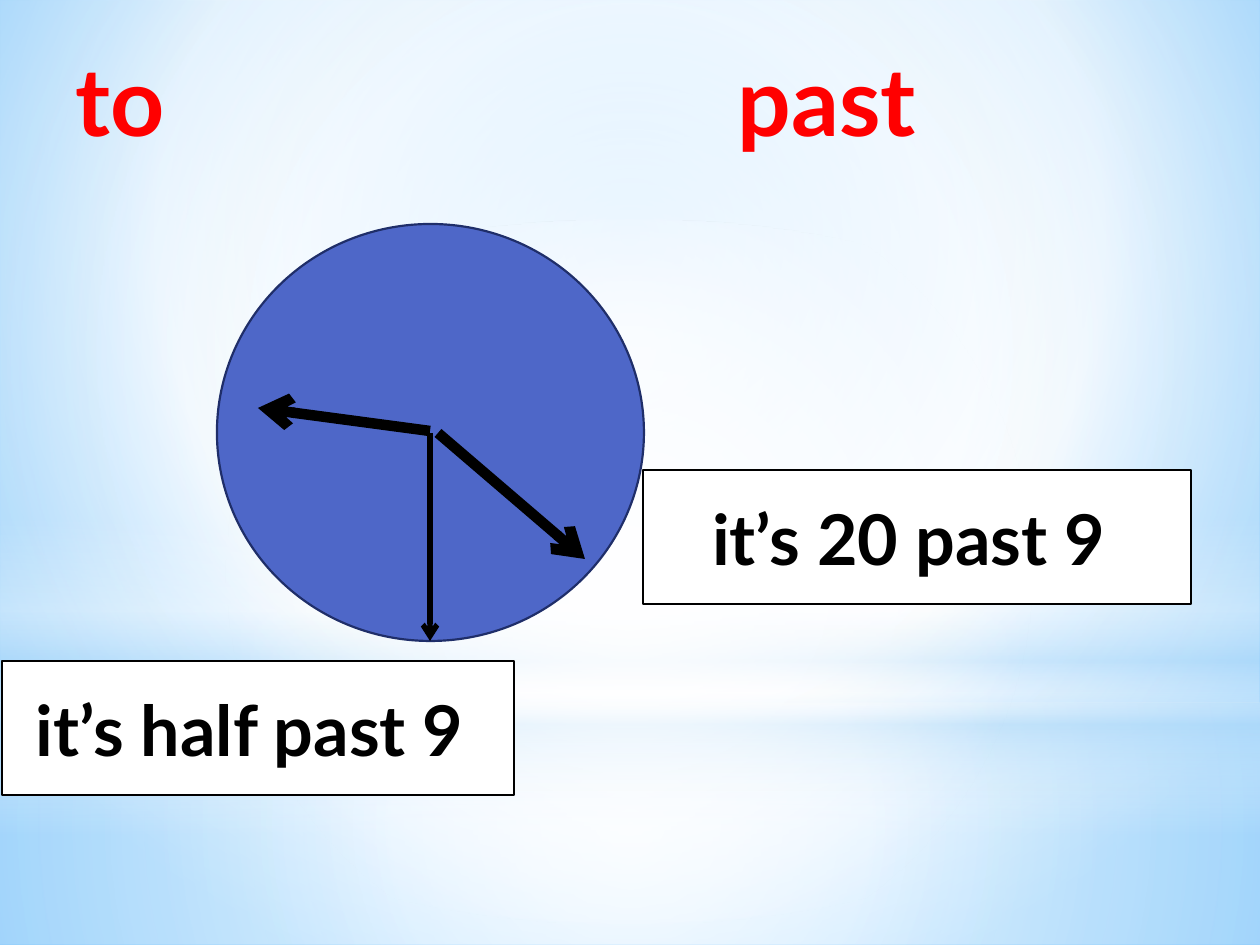
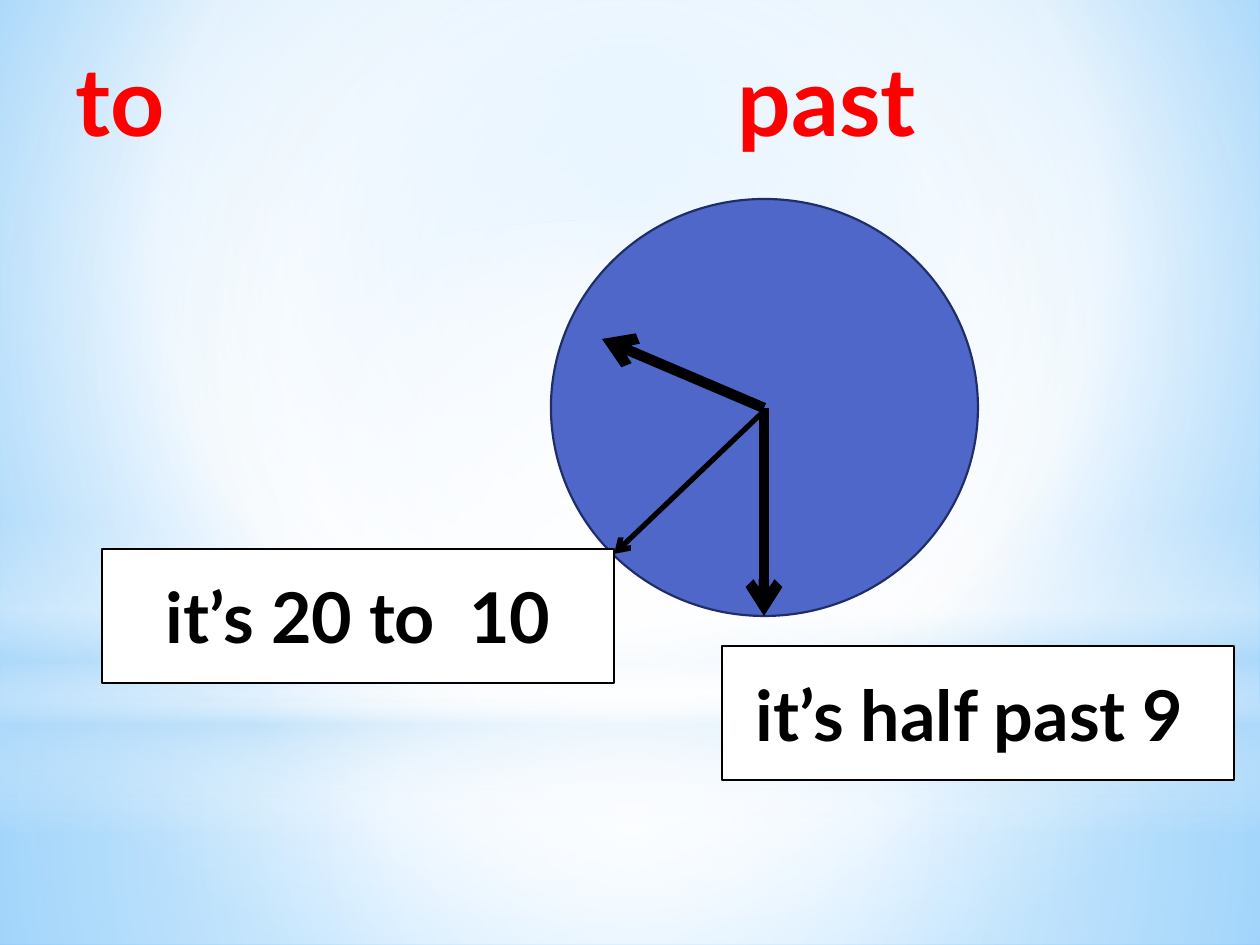
from dataclasses import dataclass

from pptx import Presentation
from pptx.dml.color import RGBColor as Rgb
from pptx.enum.shapes import MSO_CONNECTOR as Connector, MSO_SHAPE as Shape
from pptx.enum.text import MSO_ANCHOR as Anchor, PP_ALIGN as Align
from pptx.oxml import parse_xml
from pptx.oxml.ns import nsdecls, qn
from pptx.util import Emu, Pt

EMU_PER_PX = 914400 / 126


@dataclass(frozen=True)
class Theme:
    """Colours, font and sizes that both slides share."""
    font: str = "Lato"
    heading: str = "FF0000"
    ink: str = "000000"
    paper: str = "FFFFFF"
    haze: str = "B4DCFA"
    sky: str = "9ED5FF"
    deep_sky: str = "5BB9FF"
    dial: str = "4E67C8"
    rim: str = "1F2E69"
    heading_size: int = 54
    label_size: int = 40
    outline: float = 1.25
    thick_hand: int = 6
    thin_hand: int = 3


THEME = Theme()
CENTRE = (50, 50, 50, 50)


def px(*lengths):
    """Turn pixel lengths into EMU."""
    return [Emu(round(length * EMU_PER_PX)) for length in lengths]


def style_font(font, size, colour):
    """Apply the shared bold face in a size and colour."""
    font.name, font.size, font.bold = THEME.font, Pt(size), True
    font.color.rgb = Rgb.from_string(colour)


def paint_gradient(owner, stops, focus=None):
    """Replace the empty fill of an element with a radial or vertical gradient."""
    marks = "".join(
        f'<a:gs pos="{place * 1000}"><a:srgbClr val="{colour}">'
        f'<a:alpha val="{opacity * 1000}"/></a:srgbClr></a:gs>'
        for place, colour, opacity in stops)
    direction = '<a:lin ang="5400000" scaled="0"/>'
    if focus:
        edges = " ".join(f'{side}="{share * 1000}"' for side, share in zip("ltrb", focus))
        direction = f'<a:path path="circle"><a:fillToRect {edges}/></a:path>'
    gradient = parse_xml(f'<a:gradFill {nsdecls("a")} rotWithShape="1">'
                         f'<a:gsLst>{marks}</a:gsLst>{direction}</a:gradFill>')
    empty_fill = owner.find(qn("a:noFill"))
    owner.replace(empty_fill, gradient)


def build_backdrop(master, slide):
    """Put the sky gradient and its four light layers on the master."""
    white, haze = THEME.paper, THEME.haze
    master.background.fill.background()
    paint_gradient(master.element.cSld.bg.bgPr,
                   [(0, THEME.sky, 100), (60, white, 100), (100, THEME.deep_sky, 100)],
                   (20, 10, 20, 60))
    layers = [
        (Shape.RECTANGLE, 703, 242, [(0, white, 91), (37, white, 76), (100, haze, 79)], CENTRE),
        (Shape.RECTANGLE, 0, 703, [(0, white, 89), (48, white, 62), (100, haze, 79)], CENTRE),
        (Shape.RECTANGLE, 519, 315, [(0, white, 0), (29, white, 30), (45, haze, 40),
                                     (55, white, 26), (65, haze, 60), (100, white, 0)], None),
        (Shape.OVAL, 220, 703, [(0, white, 100), (56, white, 0)], CENTRE),
    ]
    for number, (outline, top, height, stops, focus) in enumerate(layers, 20):
        layer = slide.shapes.add_shape(outline, *px(0, top, 1260, height))
        layer.shadow.inherit = False
        layer.fill.background()
        paint_gradient(layer.element.spPr, stops, focus)
        layer.line.fill.background()
        layer.element.nvSpPr.cNvPr.set("id", str(number))
        master.element.cSld.spTree.append(layer.element)


def add_heading(slide, index, text, left, width):
    """Write one heading in a body placeholder, without a bullet."""
    heading = slide.placeholders[index]
    heading.left, heading.top, heading.width, heading.height = px(left, 36, width, 140)
    heading.text_frame.text = text
    paragraph = heading.text_frame.paragraphs[0]
    properties = paragraph._p.get_or_add_pPr()
    properties.set("marL", "0")
    properties.set("indent", "0")
    paragraph.space_before, paragraph.space_after = Pt(0), Pt(3)
    properties.append(parse_xml(f'<a:buNone {nsdecls("a")}/>'))
    style_font(paragraph.runs[0].font, THEME.heading_size, THEME.heading)


def add_headings(slide):
    """Head the left half with "to" and the right half with "past"."""
    title = slide.shapes.title
    title.element.getparent().remove(title.element)
    add_heading(slide, 1, "to", 63, 662)
    add_heading(slide, 2, "past", 725, 472)


def add_outlined(slide, outline, box, fill, line):
    """Add a flat shape with a solid fill and a fine outline."""
    shape = slide.shapes.add_shape(outline, *px(*box))
    shape.shadow.inherit = False
    shape.fill.solid()
    shape.fill.fore_color.rgb = Rgb.from_string(fill)
    shape.line.color.rgb = Rgb.from_string(line)
    shape.line.width = Pt(THEME.outline)
    return shape


def add_dial(slide, left, top):
    """Add the clock face."""
    add_outlined(slide, Shape.OVAL, (left, top, 427, 417), THEME.dial, THEME.rim)


def add_hand(slide, start, tip, width):
    """Add a clock hand with an arrowhead at its tip."""
    hand = slide.shapes.add_connector(Connector.STRAIGHT, *px(*start, *tip))
    hand.line.color.rgb = Rgb.from_string(THEME.ink)
    hand.line.width = Pt(width)
    properties = hand.element.spPr
    properties.find(qn("a:ln")).append(parse_xml(f'<a:tailEnd {nsdecls("a")} type="arrow"/>'))
    properties.append(parse_xml(f'<a:effectLst {nsdecls("a")}/>'))


def add_time_label(slide, text, left, top, width=512):
    """Add a white box that tells the time in words."""
    label = add_outlined(slide, Shape.RECTANGLE, (left, top, width, 134), THEME.paper, THEME.ink)
    frame = label.text_frame
    frame.text = text
    frame.word_wrap = True
    frame.vertical_anchor = Anchor.MIDDLE
    paragraph = frame.paragraphs[0]
    paragraph.alignment = Align.CENTER
    style_font(paragraph.runs[0].font, THEME.label_size, THEME.ink)


def main():
    """Build both clock slides and save them."""
    deck = Presentation()
    deck.slide_width, deck.slide_height = px(1260, 945)
    thick, thin = THEME.thick_hand, THEME.thin_hand
    clocks = [
        ((217, 224),
         [((430, 431), (258, 408), thick), ((438, 433), (585, 559), thick),
          ((430, 433), (430, 641), thin)],
         [("it’s 20 past 9 ", 643, 470, 548), ("it’s half past 9 ", 2, 661)]),
        ((551, 199),
         [((764, 408), (602, 339), thick), ((764, 408), (764, 616), thick),
          ((764, 411), (614, 554), thin)],
         [("it’s half past 9 ", 722, 646), ("it’s 20 to  10", 102, 549)]),
    ]
    for number, (dial, hands, labels) in enumerate(clocks):
        slide = deck.slides.add_slide(deck.slide_layouts.get_by_name("Two Content"))
        if number == 0:
            build_backdrop(deck.slide_master, slide)
        add_headings(slide)
        add_dial(slide, *dial)
        for hand in hands:
            add_hand(slide, *hand)
        for label in labels:
            add_time_label(slide, *label)
    deck.save("out.pptx")


if __name__ == "__main__":
    main()
